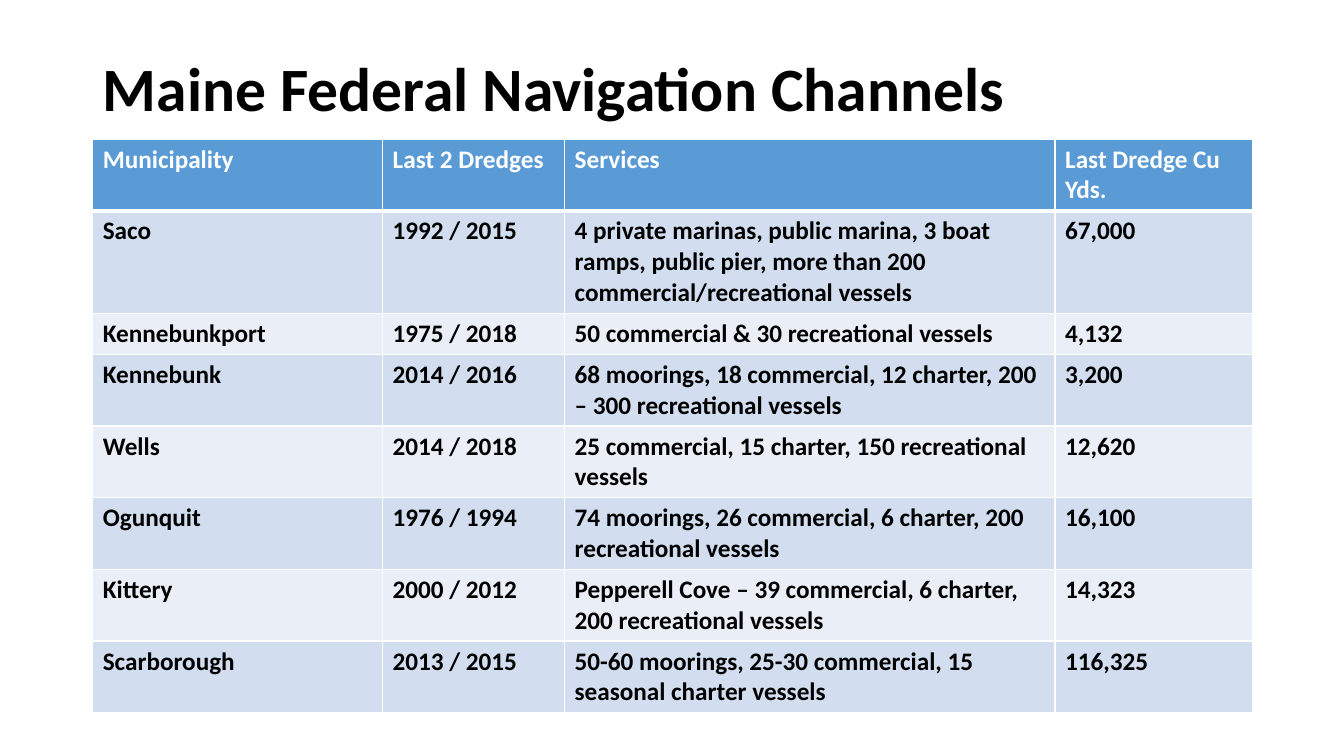
from lxml.etree import SubElement
from pptx import Presentation
from pptx.dml.color import RGBColor
from pptx.enum.text import MSO_ANCHOR, MSO_AUTO_SIZE, PP_ALIGN
from pptx.oxml.ns import qn
from pptx.util import Inches, Pt

W, H = Inches(13.33), Inches(7.5)
FONT = "Calibri"
COLORS = {
    "text": "000000",
    "header_text": "FFFFFF",
    "header": "5B9BD5",
    "odd": "D2DEEF",
    "even": "EAEFF7",
    "border": "FFFFFF",
}
COL_SHARES = (0.25, 0.157, 0.423, 0.17)
ROW_HEIGHT = Inches(0.41)
CHANNELS = [
    ("Municipality", "Last 2 Dredges", "Services", "Last Dredge Cu Yds."),
    ("Saco", "1992 / 2015",
     "4 private marinas, public marina, 3 boat ramps, public pier, "
     "more than 200 commercial/recreational vessels", "67,000"),
    ("Kennebunkport", "1975 / 2018",
     "50 commercial & 30 recreational vessels", "4,132"),
    ("Kennebunk", "2014 / 2016",
     "68 moorings, 18 commercial, 12 charter, 200 – 300 recreational vessels",
     "3,200"),
    ("Wells", "2014 / 2018",
     "25 commercial, 15 charter, 150 recreational vessels", "12,620"),
    ("Ogunquit", "1976 / 1994",
     "74 moorings, 26 commercial, 6 charter, 200 recreational vessels",
     "16,100"),
    ("Kittery", "2000 / 2012",
     "Pepperell Cove – 39 commercial, 6 charter, 200 recreational vessels",
     "14,323"),
    ("Scarborough", "2013 / 2015",
     "50-60 moorings, 25-30 commercial, 15 seasonal charter vessels",
     "116,325"),
]


def add_run(p, text, size, color):
    r = p.add_run()
    r.text = text
    r.font.name = FONT
    r.font.size = Pt(size)
    r.font.bold = True
    r.font.color.rgb = RGBColor.from_string(COLORS[color])


def set_borders(cell, top=1, bottom=1):
    """Draw the four cell borders, with widths in points."""
    tcPr = cell._tc.get_or_add_tcPr()
    for side, width in (("L", 1), ("R", 1), ("T", top), ("B", bottom)):
        ln = SubElement(tcPr, qn(f"a:ln{side}"), w=str(Pt(width)))
        fill = SubElement(ln, qn("a:solidFill"))
        SubElement(fill, qn("a:srgbClr"), val=COLORS["border"])


def add_title(s, text, x, y, w, h):
    title = s.shapes.title
    title.left, title.top, title.width, title.height = x, y, w, h
    tf = title.text_frame
    tf.auto_size = MSO_AUTO_SIZE.NONE
    tf.word_wrap = True
    tf.vertical_anchor = MSO_ANCHOR.MIDDLE
    p = tf.paragraphs[0]
    p.alignment = PP_ALIGN.LEFT
    p.line_spacing = 0.9
    add_run(p, text, 44, "text")


def add_channel_table(s, rows, x, y, w):
    table = s.shapes.add_table(
        len(rows), len(COL_SHARES), x, y, w, ROW_HEIGHT * len(rows)).table
    for col, share in zip(table.columns, COL_SHARES):
        col.width = int(w * share)
    for i, row in enumerate(rows):
        band = "header" if i == 0 else "odd" if i % 2 else "even"
        for j, text in enumerate(row):
            cell = table.cell(i, j)
            set_borders(cell, top=3 if i == 1 else 1, bottom=3 if i == 0 else 1)
            cell.fill.solid()
            cell.fill.fore_color.rgb = RGBColor.from_string(COLORS[band])
            add_run(cell.text_frame.paragraphs[0], text, 18,
                    "header_text" if i == 0 else "text")


def main():
    prs = Presentation()
    prs.slide_width, prs.slide_height = W, H
    s = prs.slides.add_slide(prs.slide_layouts[5])
    left, width = Inches(0.92), Inches(11.5)
    add_title(s, "Maine Federal Navigation Channels",
              left, Inches(0.4), width, Inches(1.02))
    add_channel_table(s, CHANNELS, left, Inches(1.38), width)
    prs.save("out.pptx")


if __name__ == "__main__":
    main()
